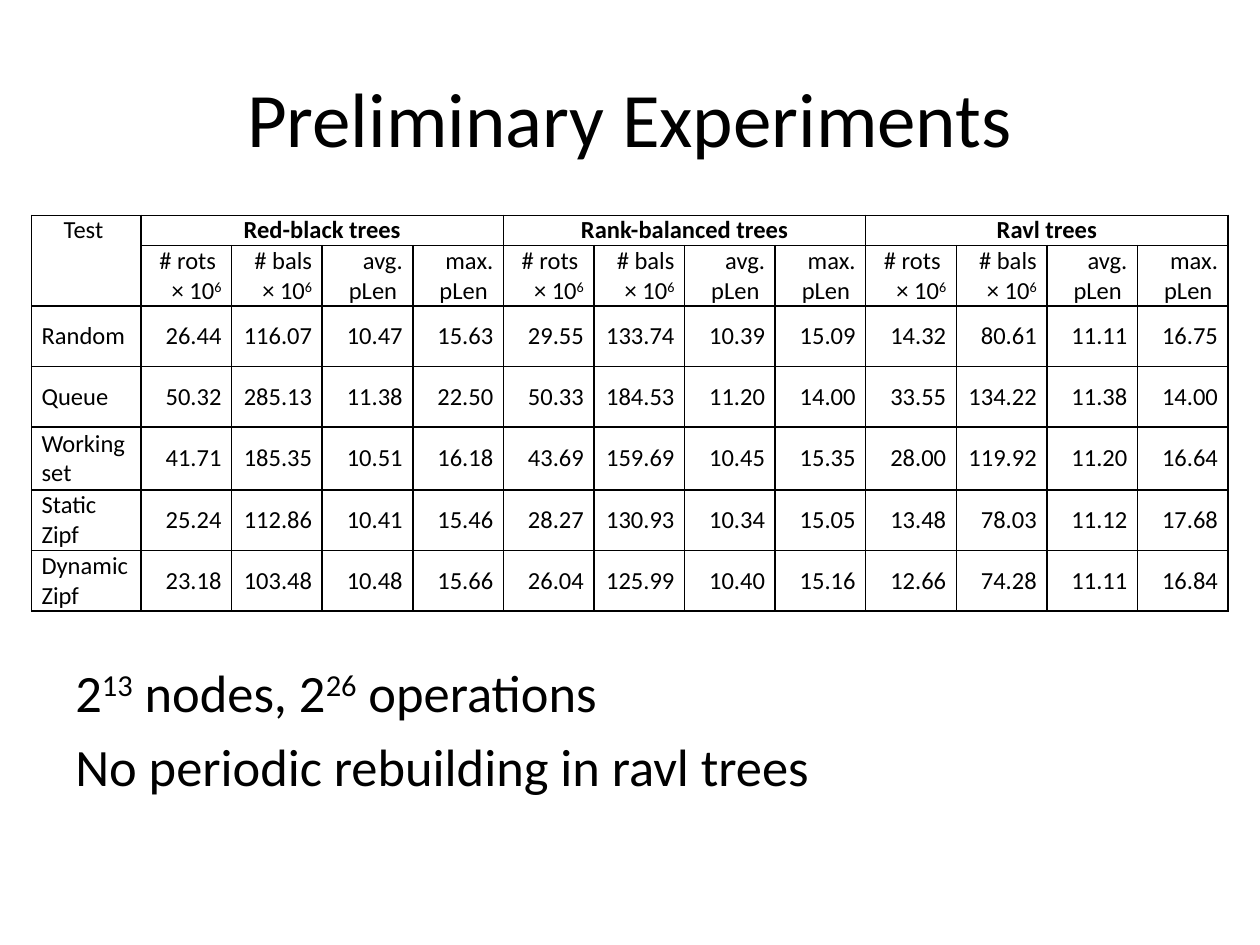
import pptx
import pptx.util
import pptx.oxml
import pptx.oxml.ns
import pptx.dml.color
import pptx.enum.text

Inches, Pt = pptx.util.Inches, pptx.util.Pt
ALIGN, ANCHOR = pptx.enum.text.PP_ALIGN, pptx.enum.text.MSO_ANCHOR
FONT, BLACK = "Calibri", "000000"

TITLE = "Preliminary Experiments"
NOTES = ["2^13^ nodes, 2^26^ operations", "No periodic rebuilding in ravl trees"]
TREES = ["Red-black trees", "Rank-balanced trees", "Ravl trees"]
MEASURES = [
    ["# rots ", "× 10^6^"],
    ["# bals", "× 10^6^"],
    ["avg.", "pLen "],
    ["max.", "pLen "],
]
RESULTS = [
    ("Random", "26.44 116.07 10.47 15.63 29.55 133.74 10.39 15.09 14.32 80.61 11.11 16.75"),
    ("Queue", "50.32 285.13 11.38 22.50 50.33 184.53 11.20 14.00 33.55 134.22 11.38 14.00"),
    ("Working set", "41.71 185.35 10.51 16.18 43.69 159.69 10.45 15.35 28.00 119.92 11.20 16.64"),
    ("Static Zipf", "25.24 112.86 10.41 15.46 28.27 130.93 10.34 15.05 13.48 78.03 11.12 17.68"),
    ("Dynamic Zipf", "23.18 103.48 10.48 15.66 26.04 125.99 10.40 15.16 12.66 74.28 11.11 16.84"),
]

WIDTH, HEIGHT = 10, 7.5
MARGIN = 0.05 * WIDTH
TABLE_LEFT, TABLE_TOP, TABLE_WIDTH = 0.25, 1.71, 9.5
TEST_WIDTH = 0.87
ROW_HEIGHTS = [0.24, 0.48, 0.48, 0.48, 0.5, 0.48, 0.48]


def color(hex_string):
    return pptx.dml.color.RGBColor.from_string(hex_string)


def write(frame, lines, size=14, bold=False, align=ALIGN.LEFT, gap=0):
    frame.word_wrap = True
    for index, line in enumerate(lines):
        paragraph = frame.add_paragraph() if index else frame.paragraphs[0]
        paragraph.alignment = align
        paragraph.space_before = Pt(gap if index else 0)
        for part, words in enumerate(line.split("^")):
            if not words:
                continue
            run = paragraph.add_run()
            run.text = words
            run.font.name, run.font.size, run.font.bold = FONT, Pt(size), bold
            run.font.color.rgb = color(BLACK)
            if part % 2:
                run.font._element.set("baseline", "30000")


def add_text(slide, lines, box, anchor=ANCHOR.TOP, **style):
    frame = slide.shapes.add_textbox(*map(Inches, box)).text_frame
    frame.vertical_anchor = anchor
    write(frame, lines, **style)


def outline(cell):
    properties = cell._tc.get_or_add_tcPr()
    for side in ("lnL", "lnR", "lnT", "lnB"):
        properties.append(pptx.oxml.parse_xml(
            f'<a:{side} {pptx.oxml.ns.nsdecls("a")} w="12700"><a:solidFill>'
            f'<a:srgbClr val="{BLACK}"/></a:solidFill></a:{side}>'))


def fill_cell(cell, lines, anchor=ANCHOR.MIDDLE, **style):
    cell.vertical_anchor = anchor
    write(cell.text_frame, lines, **style)


def add_results(slide):
    columns = 1 + len(TREES) * len(MEASURES)
    table = slide.shapes.add_table(
        len(ROW_HEIGHTS), columns, Inches(TABLE_LEFT), Inches(TABLE_TOP),
        Inches(TABLE_WIDTH), Inches(sum(ROW_HEIGHTS))).table
    table.first_row = table.horz_banding = False
    for index, column in enumerate(table.columns):
        column.width = Inches((TABLE_WIDTH - TEST_WIDTH) / (columns - 1) if index else TEST_WIDTH)
    for row, height in zip(table.rows, ROW_HEIGHTS):
        row.height = Inches(height)
    for cell in table.iter_cells():
        cell.margin_left = cell.margin_right = Inches(0.08)
        cell.margin_top = cell.margin_bottom = 0
        outline(cell)
        cell.fill.background()

    table.cell(0, 0).merge(table.cell(1, 0))
    fill_cell(table.cell(0, 0), ["Test "], ANCHOR.TOP, align=ALIGN.CENTER)
    for group, tree in enumerate(TREES):
        first = 1 + group * len(MEASURES)
        table.cell(0, first).merge(table.cell(0, first + len(MEASURES) - 1))
        fill_cell(table.cell(0, first), [tree], ANCHOR.TOP, bold=True, align=ALIGN.CENTER)
        for offset, measure in enumerate(MEASURES):
            fill_cell(table.cell(1, first + offset), measure, ANCHOR.BOTTOM, align=ALIGN.RIGHT)
    for row, (test, values) in enumerate(RESULTS, 2):
        fill_cell(table.cell(row, 0), [test])
        for column, value in enumerate(values.split(), 1):
            fill_cell(table.cell(row, column), [value], align=ALIGN.RIGHT)


def main():
    deck = pptx.Presentation()
    deck.slide_width, deck.slide_height = Inches(WIDTH), Inches(HEIGHT)
    slide = deck.slides.add_slide(deck.slide_layouts[6])
    text_width = WIDTH - 2 * MARGIN
    add_text(slide, [TITLE], (MARGIN, 0.04 * HEIGHT, text_width, 1.25),
             ANCHOR.MIDDLE, size=44, align=ALIGN.CENTER)
    add_text(slide, NOTES, (MARGIN, 5.19, text_width, 1.64), size=30, gap=6)
    add_results(slide)
    deck.save("out.pptx")


if __name__ == "__main__":
    main()
